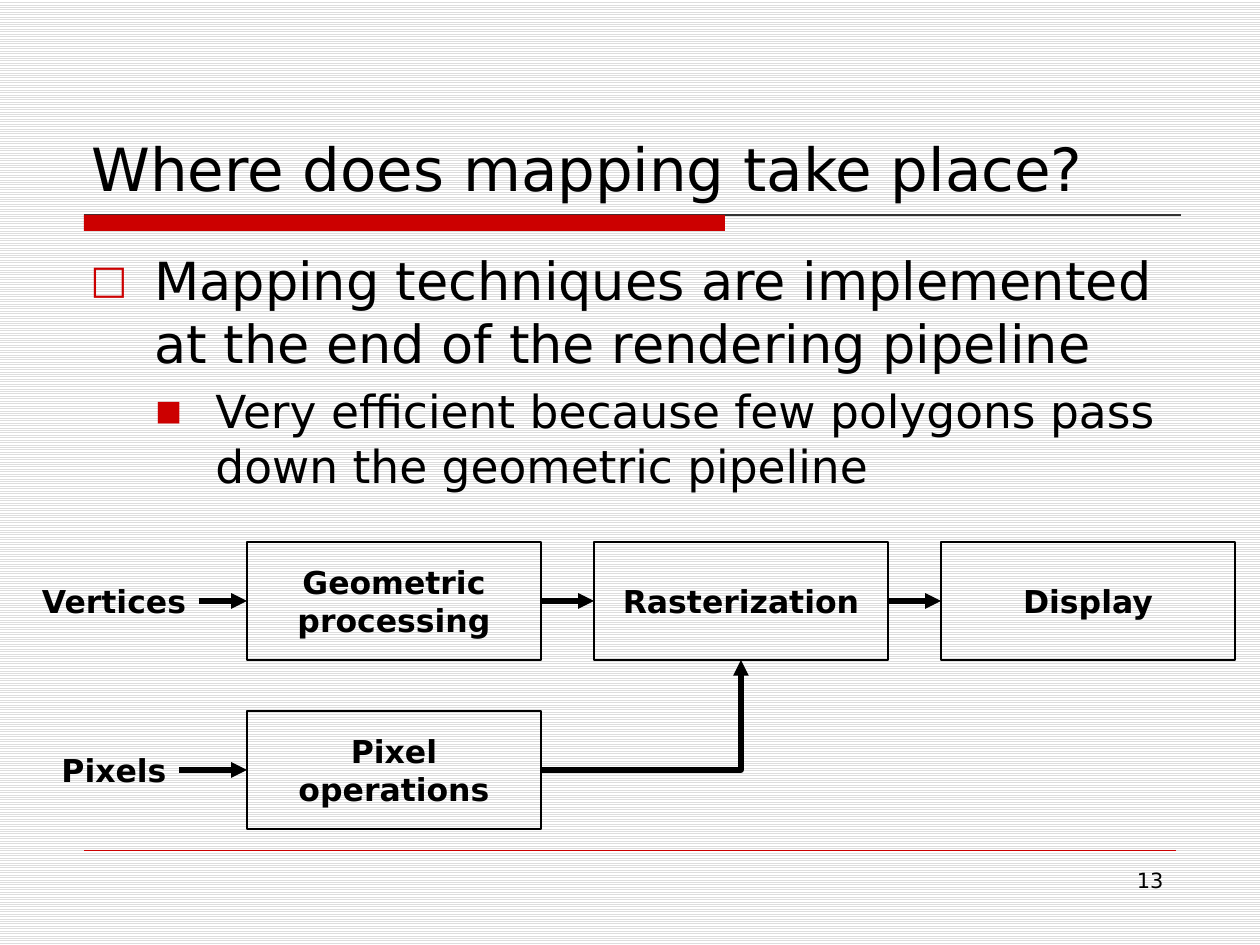
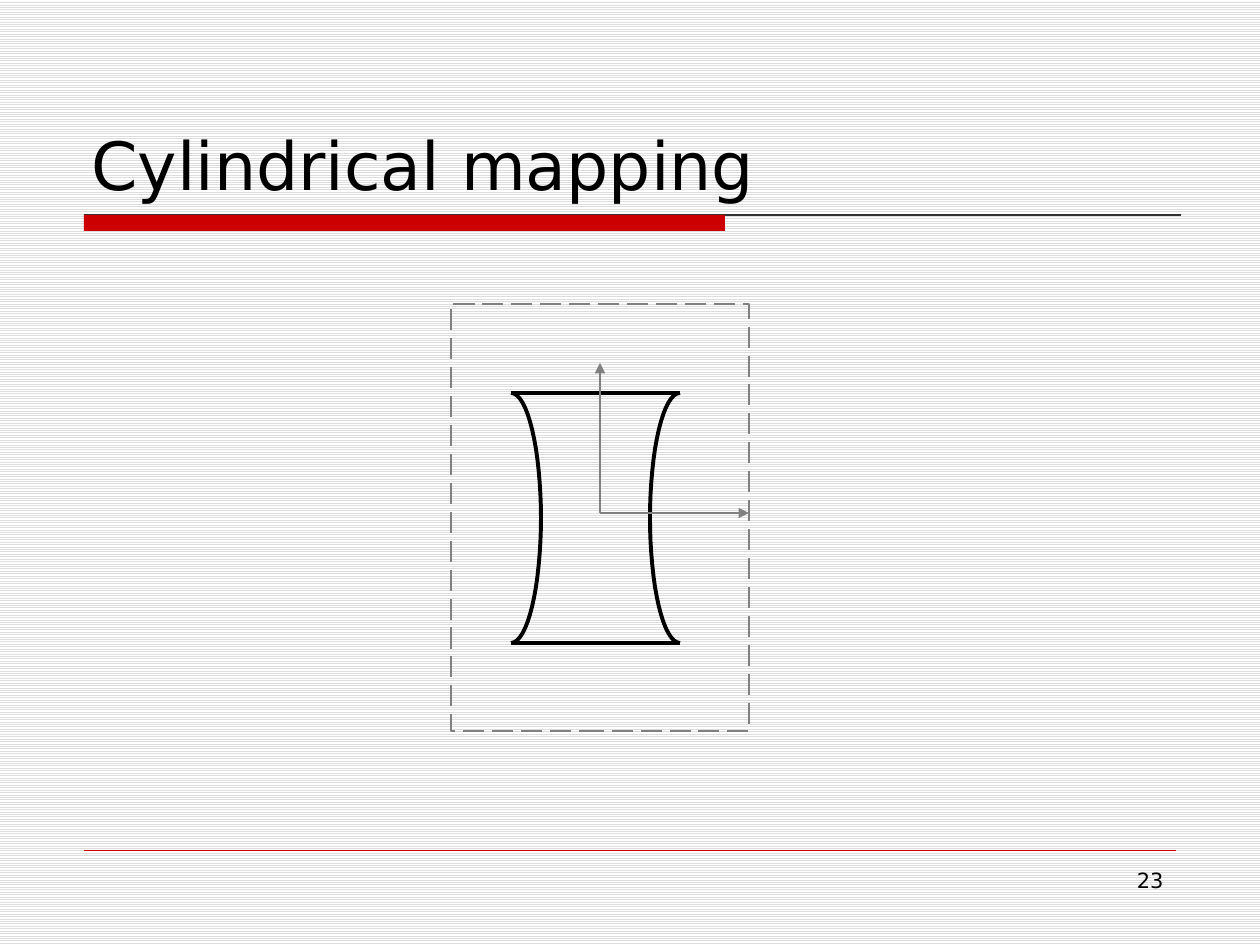
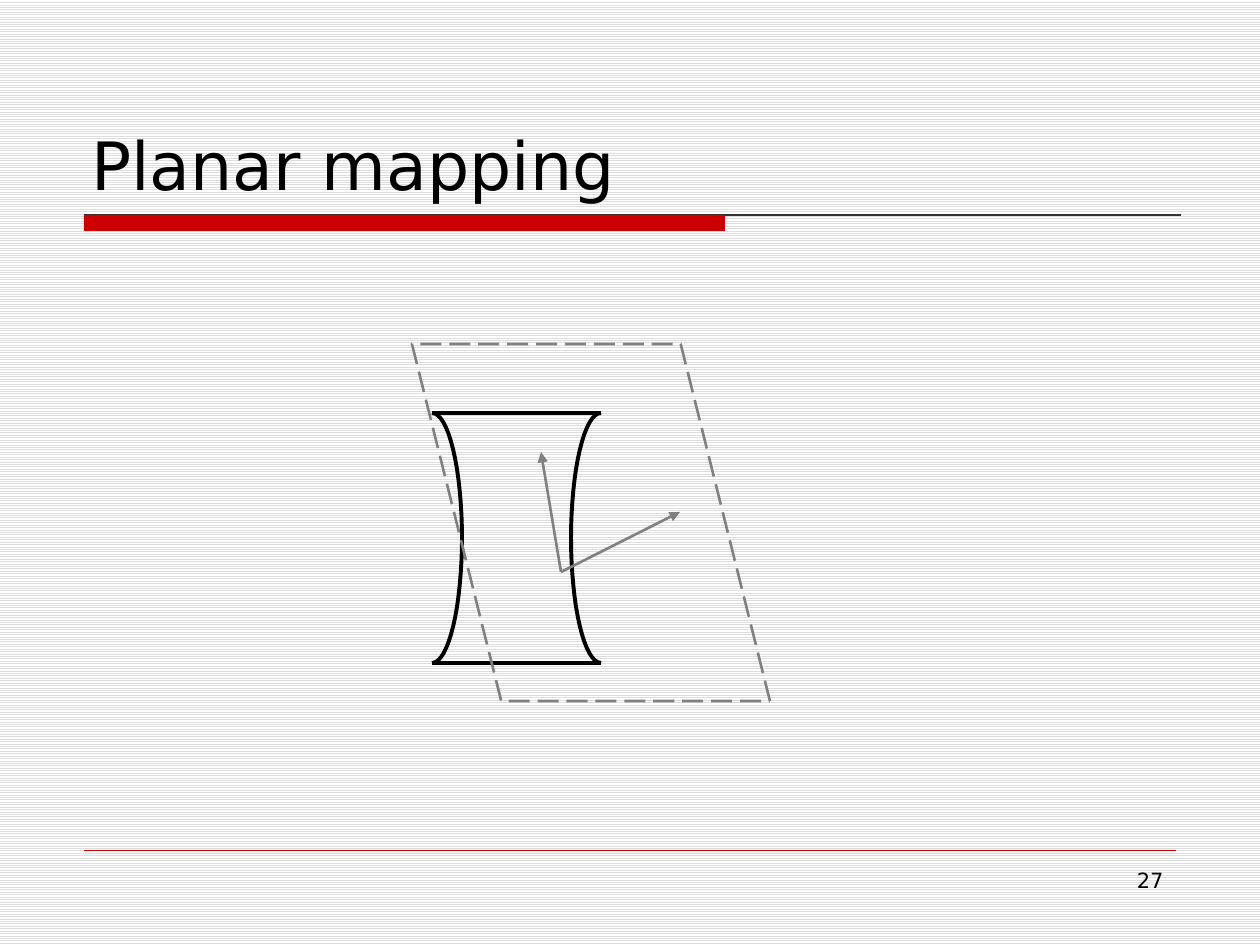
from math import cos, pi, sin

from lxml import etree
from pptx import Presentation
from pptx.dml.color import RGBColor
from pptx.enum.dml import MSO_LINE, MSO_PATTERN
from pptx.enum.shapes import MSO_CONNECTOR, MSO_SHAPE
from pptx.enum.text import MSO_ANCHOR, PP_ALIGN
from pptx.oxml.ns import qn
from pptx.util import Emu, Pt

STRAIGHT, ELBOW = MSO_CONNECTOR.STRAIGHT, MSO_CONNECTOR.ELBOW
RECTANGLE, PARALLELOGRAM = MSO_SHAPE.RECTANGLE, MSO_SHAPE.PARALLELOGRAM
LEFT, CENTER, RIGHT = PP_ALIGN.LEFT, PP_ALIGN.CENTER, PP_ALIGN.RIGHT
TOP, MIDDLE, BOTTOM = MSO_ANCHOR.TOP, MSO_ANCHOR.MIDDLE, MSO_ANCHOR.BOTTOM
LONG_DASH = MSO_LINE.LONG_DASH
LIGHT_HORIZONTAL = MSO_PATTERN.LIGHT_HORIZONTAL
LEFT_SIDE, BOTTOM_SIDE, RIGHT_SIDE = 1, 2, 3

FONT = "DejaVu Sans"
COLORS = {
    "ink": "000000",
    "accent": "CC0000",
    "rule": "333333",
    "guide": "808080",
    "stripe": "DDDDDD",
    "paper": "FFFFFF",
}
LABEL = {"size": Pt(18), "bold": True}
BULLETS = [
    {"char": "□", "percent": 75, "margin": 64, "indent": 64, "size": 30, "before": 0},
    {"char": "■", "percent": 62, "margin": 125, "indent": 60, "size": 26, "before": 5.2},
]


def px(length):
    return Emu(round(length * 914400 / 126))


def color(name):
    return RGBColor.from_string(COLORS[name])


def set_values(target, values):
    for name, value in values.items():
        setattr(target, name, value)


class Deck:
    def __init__(self):
        self.presentation = Presentation()
        set_values(self.presentation, {"slide_width": px(1260), "slide_height": px(945)})
        self.slide = None
        self.shapes = None

    def new_slide(self, title, number, title_size=38):
        self.slide = self.presentation.slides.add_slide(self.presentation.slide_layouts[6])
        self.shapes = self.slide.shapes
        backdrop = self.slide.background.fill
        backdrop.patterned()
        backdrop.pattern = LIGHT_HORIZONTAL
        backdrop.fore_color.rgb = color("stripe")
        backdrop.back_color.rgb = color("paper")
        self.line((84, 215), (1181, 215), "rule", 0.75)
        self.box((84, 215, 641, 16), fill="accent")
        self.line((84, 850), (1176, 850), "accent", 0.25)
        self.text((79, 42, 1103, 168), title, {"size": Pt(title_size)}, anchor=BOTTOM)
        self.text((903, 861, 273, 65), str(number), {"size": Pt(12)}, RIGHT)

    def begin_group(self):
        self.shapes = self.slide.shapes.add_group_shape().shapes

    def end_group(self):
        self.shapes = self.slide.shapes

    def put_text(self, paragraph, text, font):
        paragraph.text = text
        for run in paragraph.runs:
            set_values(run.font, {"name": FONT, **font})
            run.font.color.rgb = color("ink")

    def text(self, place, text, font, align=LEFT, anchor=TOP, wrap=True):
        label = self.shapes.add_textbox(*map(px, place))
        set_values(label.text_frame, {"word_wrap": wrap, "vertical_anchor": anchor})
        paragraph = label.text_frame.paragraphs[0]
        paragraph.alignment = align
        self.put_text(paragraph, text, font)
        return label

    def label(self, place, text):
        return self.text(place, text, LABEL, CENTER, MIDDLE, False)

    def bullets(self, place, items):
        frame = self.shapes.add_textbox(*map(px, place)).text_frame
        frame.word_wrap = True
        for index, (level, text) in enumerate(items):
            paragraph = frame.add_paragraph() if index else frame.paragraphs[0]
            style = BULLETS[level]
            set_values(paragraph, {"level": level, "space_before": Pt(style["before"])})
            properties = paragraph._p.get_or_add_pPr()
            properties.set("marL", str(px(style["margin"])))
            properties.set("indent", str(-px(style["indent"])))
            tint = etree.SubElement(properties, qn("a:buClr"))
            etree.SubElement(tint, qn("a:srgbClr"), val=COLORS["accent"])
            etree.SubElement(properties, qn("a:buSzPct"), val=str(style["percent"] * 1000))
            etree.SubElement(properties, qn("a:buFont"), typeface=FONT)
            etree.SubElement(properties, qn("a:buChar"), char=style["char"])
            self.put_text(paragraph, text, {"size": Pt(style["size"])})

    def outline(self, shape, name, width, dash=None):
        shape.line.color.rgb = color(name)
        set_values(shape.line, {"width": Pt(width), "dash_style": dash})

    def box(self, place, kind=RECTANGLE, fill=None, line=None, width=0.75, dash=None):
        shape = self.shapes.add_shape(kind, *map(px, place))
        shape.shadow.inherit = False
        if fill:
            shape.fill.solid()
            shape.fill.fore_color.rgb = color(fill)
        else:
            shape.fill.background()
        if line:
            self.outline(shape, line, width, dash)
        else:
            shape.line.fill.background()
        return shape

    def stage(self, place, text):
        shape = self.box(place, line="ink")
        set_values(shape.text_frame, {"word_wrap": False, "vertical_anchor": MIDDLE})
        paragraph = shape.text_frame.paragraphs[0]
        paragraph.alignment = CENTER
        self.put_text(paragraph, text, LABEL)
        return shape

    def line(self, start, end, name, width, arrow=False, kind=STRAIGHT):
        connector = self.shapes.add_connector(kind, *map(px, (*start, *end)))
        self.outline(connector, name, width)
        properties = connector._element.spPr
        if arrow:
            etree.SubElement(properties.find(qn("a:ln")), qn("a:tailEnd"), type="triangle")
        etree.SubElement(properties, qn("a:effectLst"))
        return connector

    def flow(self, source, target, kind=STRAIGHT, target_side=LEFT_SIDE):
        connector = self.line((0, 0), (0, 0), "ink", 3, True, kind)
        connector.begin_connect(source, RIGHT_SIDE)
        connector.end_connect(target, target_side)
        if kind == ELBOW:
            connector._element.spPr.find(qn("a:prstGeom")).set("prst", "bentConnector2")

    def curve(self, center, radius_x, radius_y, steps=16):
        angles = [pi / 2 * step / steps for step in range(steps + 1)]
        points = [
            (px(center[0] + radius_x * sin(angle)), px(center[1] + radius_y * cos(angle)))
            for angle in angles
        ]
        builder = self.shapes.build_freeform(*points[0])
        builder.add_line_segments(points[1:], close=False)
        arc = builder.convert_to_shape()
        arc.shadow.inherit = False
        arc.fill.background()
        self.outline(arc, "ink", 2.25)

    def vase(self, left, top):
        right, bottom, depth, rise = left + 169, top + 250, 30, 126
        self.begin_group()
        for edge, radius_x in ((left, depth), (right, -depth)):
            self.curve((edge, top + rise), radius_x, -rise)
            self.curve((edge, bottom - rise), radius_x, rise)
        for y in (top, bottom):
            self.line((left, y), (right, y), "ink", 2.25)
        self.end_group()

    def axes(self, origin, tips, width):
        for tip in tips:
            self.line(origin, tip, "guide", width, True)


def pipeline_slide(deck):
    deck.new_slide("Where does mapping take place?", 13, 34)
    deck.bullets((78, 242, 1103, 271), [
        (0, "Mapping techniques are implemented at the end of the rendering pipeline"),
        (1, "Very efficient because few polygons pass down the geometric pipeline"),
    ])
    pixels = deck.label((49, 745, 130, 50), "Pixels")
    pixel_operations = deck.stage((247, 711, 294, 118), "Pixel\voperations")
    names = ("Geometric\vprocessing", "Rasterization", "Display")
    stages = [
        deck.stage((247 + 347 * column, 542, 294, 118), name)
        for column, name in enumerate(names)
    ]
    vertices = deck.label((29, 576, 170, 50), "Vertices")
    chain = [vertices, *stages]
    for source, target in zip(chain, chain[1:]):
        deck.flow(source, target)
    deck.flow(pixels, pixel_operations)
    deck.flow(pixel_operations, stages[1], ELBOW, BOTTOM_SIDE)


def cylindrical_slide(deck):
    deck.new_slide("Cylindrical mapping", 23)
    deck.vase(511, 393)
    deck.begin_group()
    deck.axes((600, 513), [(749, 513), (600, 363)], 0.75)
    deck.end_group()
    deck.box((451, 304, 298, 427), line="guide", width=1.5, dash=LONG_DASH)


def planar_slide(deck):
    deck.new_slide("Planar mapping", 27)
    deck.vase(432, 413)
    plane = deck.box((412, 344, 358, 357), PARALLELOGRAM, line="guide", width=1.5, dash=LONG_DASH)
    plane._element.spPr.find(qn("a:xfrm")).set("flipH", "1")
    deck.axes((561, 572), [(680, 512), (541, 452)], 1.5)


def main():
    deck = Deck()
    pipeline_slide(deck)
    cylindrical_slide(deck)
    planar_slide(deck)
    deck.presentation.save("out.pptx")


if __name__ == "__main__":
    main()
